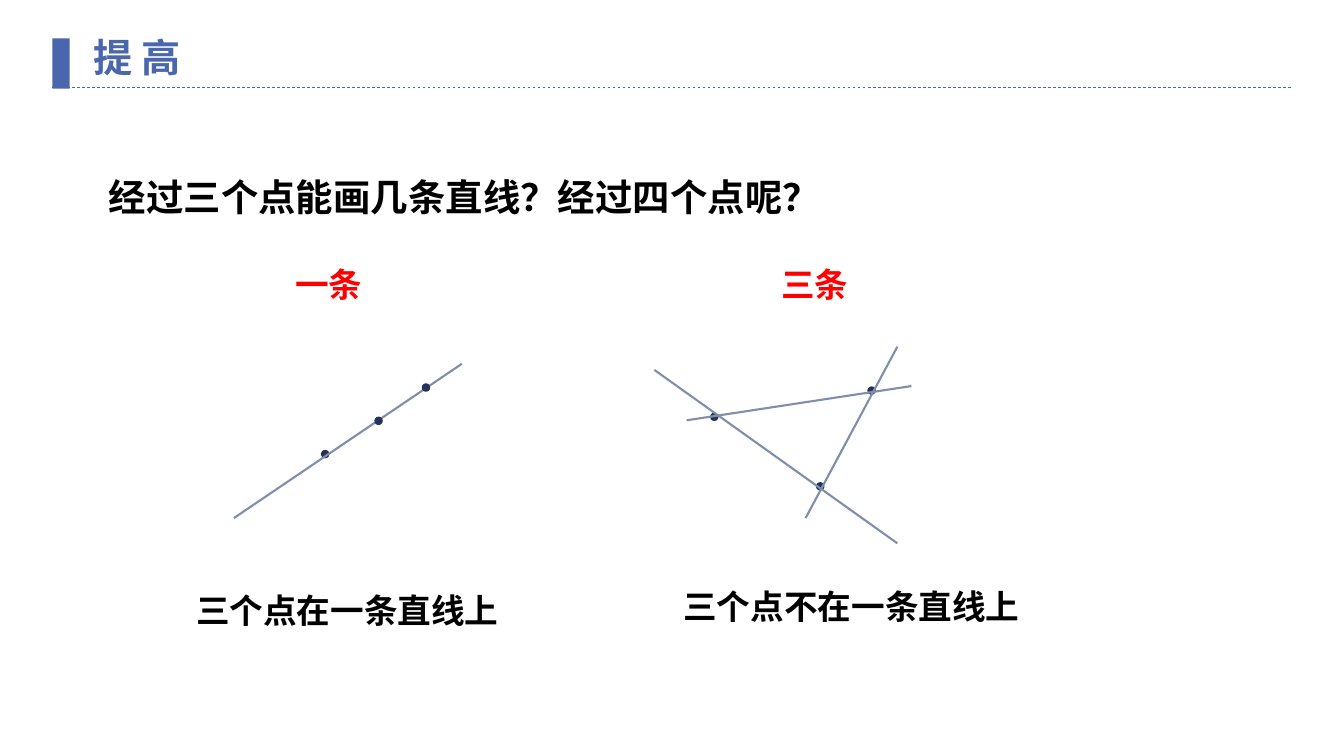
from pptx import Presentation
from pptx.dml.color import RGBColor
from pptx.enum import dml, shapes, text
from pptx.oxml.ns import qn
from pptx.util import Inches, Pt
from lxml import etree

HUES = {"blue": "4A66AC", "navy": "253356", "grey": "7F8FA9",
        "black": "000000", "red": "FF0000"}

deck = Presentation()
deck.slide_width = Inches(13.33)
deck.slide_height = Inches(7.5)
page = deck.slides.add_slide(deck.slide_layouts[6])


def add_line(ends, hue, width):
    line = page.shapes.add_connector(
        shapes.MSO_CONNECTOR.STRAIGHT, *[Inches(n) for n in ends])
    line.line.color.rgb = RGBColor.from_string(HUES[hue])
    line.line.width = Pt(width)
    etree.SubElement(line._element.spPr, qn("a:effectLst"))
    return line


def add_solid(kind, box, hue):
    solid = page.shapes.add_shape(kind, *[Inches(n) for n in box])
    solid.shadow.inherit = False
    solid.fill.solid()
    solid.fill.fore_color.rgb = RGBColor.from_string(HUES[hue])
    return solid


rule = add_line((0.52, 0.87, 12.82, 0.87), "blue", 0.5)
rule.line.dash_style = dml.MSO_LINE.DASH
bar = add_solid(shapes.MSO_SHAPE.RECTANGLE, (0.52, 0.38, 0.17, 0.5), "blue")
bar.line.fill.background()

layers = [
    ([(3.19, 4.47), (7.05, 4.1), (8.61, 3.84)],
     [(4.58, 3.61, 2.32, 5.14), (6.81, 4.17, 9.04, 3.83)]),
    ([(3.72, 4.14), (4.19, 3.81), (8.1, 4.79)],
     [(6.49, 3.67, 8.9, 5.39), (8.9, 3.44, 7.99, 5.14)]),
]
for dots, lines in layers:
    for left, top in dots:
        dot = add_solid(shapes.MSO_SHAPE.OVAL, (left, top, 0.07, 0.07), "navy")
        dot.line.color.rgb = RGBColor.from_string(HUES["navy"])
        dot.line.width = Pt(1)
    for ends in lines:
        add_line(ends, "grey", 1.5)

LEFT, MID = text.PP_ALIGN.LEFT, text.PP_ALIGN.CENTER
labels = [
    ("提 高", (0.83, 0.28, 3.79, 0.57), 28, "blue", LEFT, 1),
    ("经过三个点能画几条直线？经过四个点呢？", (0.98, 1.57, 11.65, 0.62),
     26.7, "black", LEFT, 1.25),
    ("一条", (2.16, 2.57, 2.2, 0.5), 24, "red", MID, 1),
    ("三条", (6.98, 2.57, 2.2, 0.5), 24, "red", MID, 1),
    ("三个点在一条直线上", (1.53, 5.8, 3.83, 0.5), 24, "black", MID, 1),
    ("三个点不在一条直线上", (6.53, 5.76, 3.83, 0.5), 24, "black", MID, 1),
]
for words, box, size, hue, align, space in labels:
    frame = page.shapes.add_textbox(*[Inches(n) for n in box]).text_frame
    frame.word_wrap = True
    frame.auto_size = text.MSO_AUTO_SIZE.SHAPE_TO_FIT_TEXT
    para = frame.paragraphs[0]
    para.text = words
    para.alignment = align
    para.line_spacing = space
    para.font.name = "Arial"
    para.font.size = Pt(size)
    para.font.bold = True
    para.font.color.rgb = RGBColor.from_string(HUES[hue])

deck.save("out.pptx")
